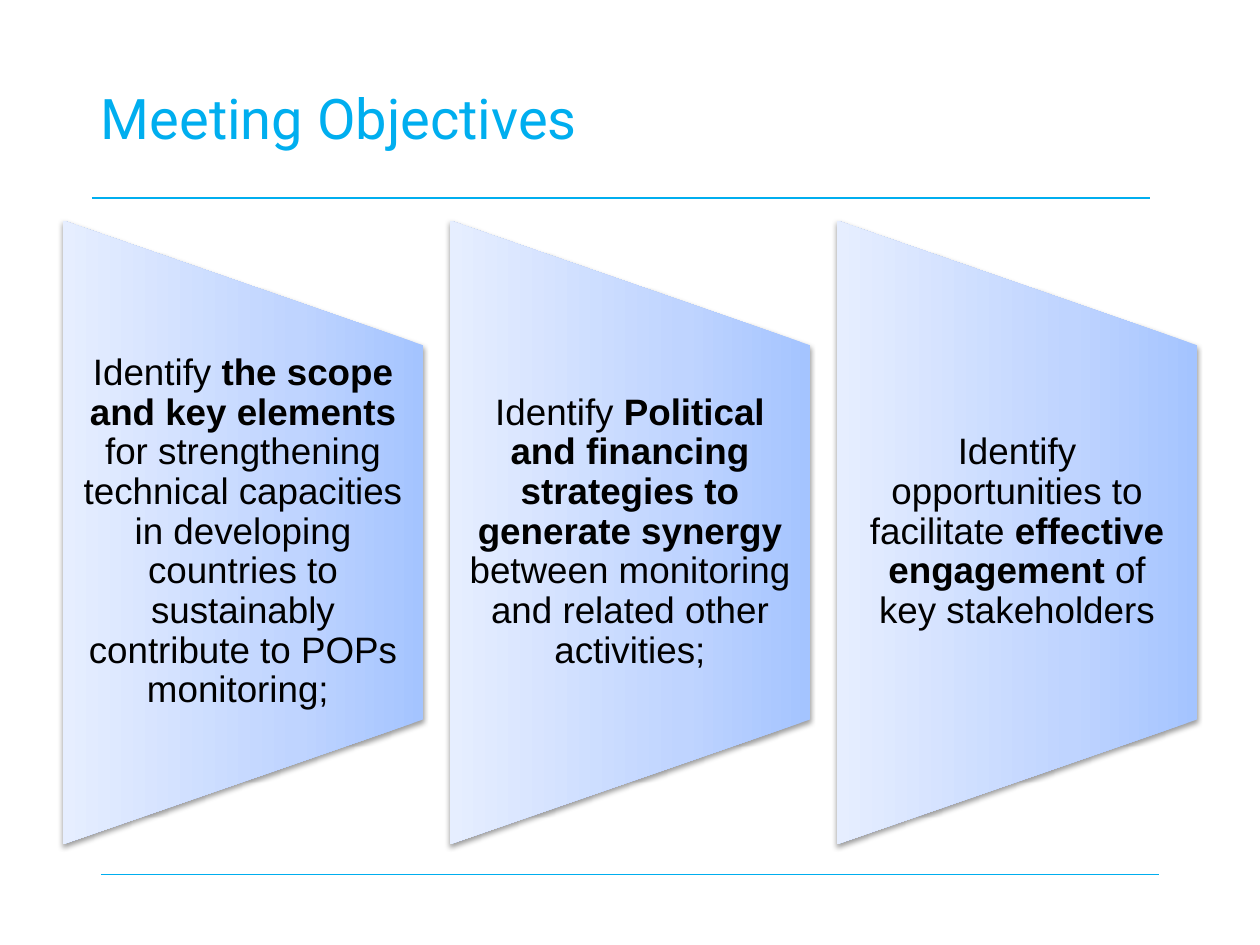
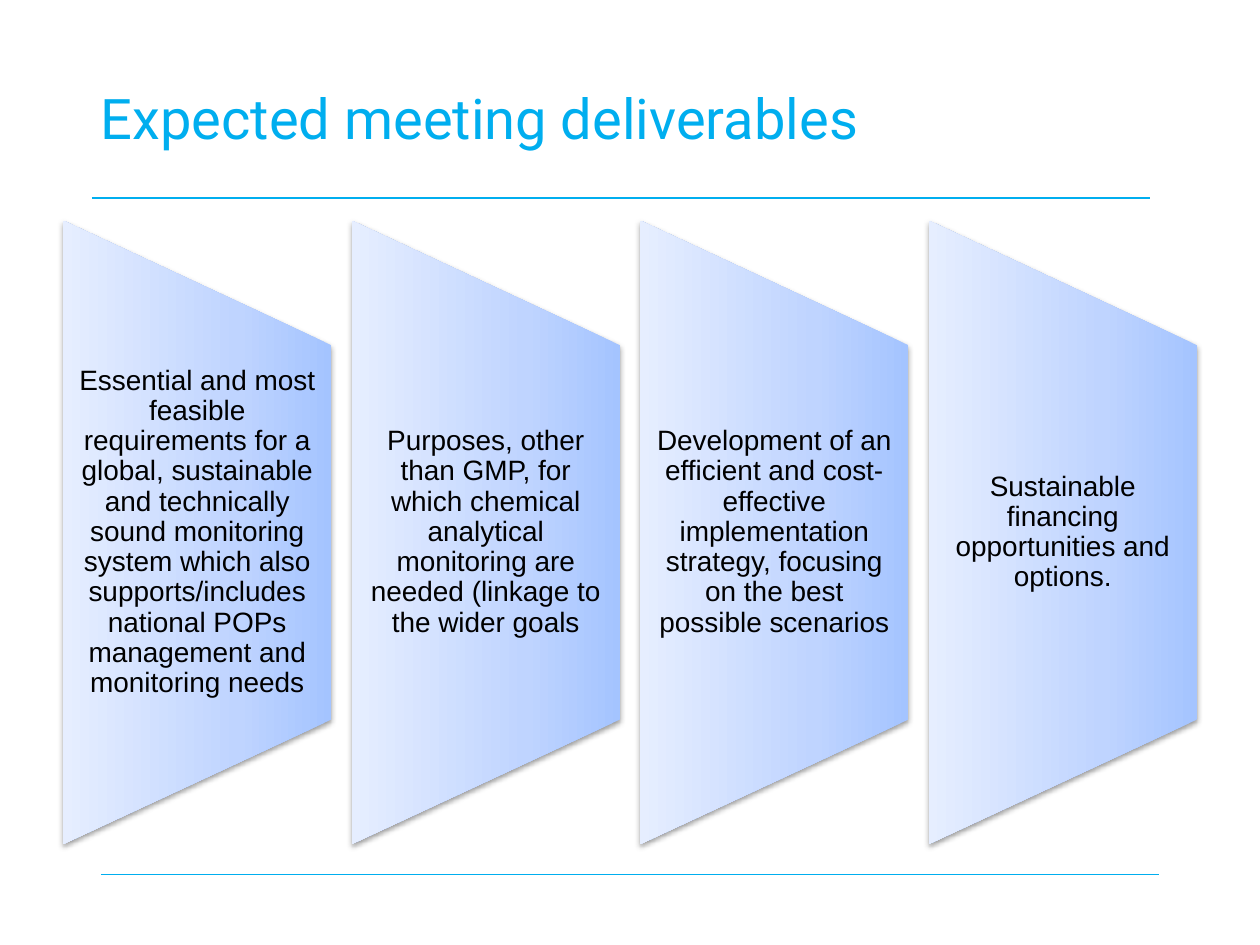
from lxml.etree import SubElement
from pptx import Presentation
from pptx.dml.color import RGBColor
from pptx.enum.shapes import MSO_CONNECTOR, MSO_SHAPE
from pptx.enum.text import MSO_ANCHOR, PP_ALIGN
from pptx.oxml import parse_xml
from pptx.oxml.ns import nsdecls, qn
from pptx.util import Inches, Pt

# Each panel is a list of (text, bold) spans.
SLIDES = [
    {
        "title": "Meeting Objectives",
        "size": 21,
        "inset": 0.15,
        "panels": [
            [("Identify ", False),
             ("the scope and key elements ", True),
             ("for strengthening technical capacities in developing countries "
              "to sustainably contribute to POPs monitoring; ", False)],
            [("Identify ", False),
             ("Political and financing strategies to generate synergy", True),
             (" between monitoring and related other activities;", False)],
            [("Identify opportunities to facilitate ", False),
             ("effective engagement ", True),
             ("of key stakeholders", False)],
        ],
    },
    {
        "title": "Expected meeting deliverables",
        "size": 16,
        "inset": 0.11,
        "panels": [
            [("Essential and most feasible requirements for a global, sustainable "
              "and technically sound monitoring system which also "
              "supports/includes national POPs management and monitoring needs",
              False)],
            [("Purposes, other than GMP, for which chemical analytical monitoring "
              "are needed (linkage to the wider goals", False)],
            [("Development of an efficient and cost-effective implementation "
              "strategy, focusing on the best possible scenarios", False)],
            [("Sustainable financing opportunities and options.", False)],
        ],
    },
]

COLOURS = {
    "accent": "00AEEF",
    "text": "000000",
    "shadow": "000000",
    "panel_dark": "A4C4FF",
    "panel_middle": "BFD4FF",
    "panel_light": "E6EEFF",
}
PANEL_STOPS = [(0, "panel_dark"), (35, "panel_middle"), (100, "panel_light")]
TITLE_FONT, BODY_FONT = "Roboto", "Arial"

ROW_LEFT, ROW_TOP, ROW_WIDTH, ROW_HEIGHT = 0.5, 1.75, 9, 4.95
GAP_RATIO = 0.075  # gap between panels, as a share of a panel's width
TEXT_TOP, TEXT_HEIGHT = 2.74, 2.97
RULE_LENGTH = 8.4
RULES = [(0.73, 1.57), (0.8, 6.94)]


def colour(name):
    return RGBColor.from_string(COLOURS[name])


def add_text_box(page, left, top, width, height, inset_x, inset_y):
    box = page.shapes.add_textbox(
        Inches(left), Inches(top), Inches(width), Inches(height))
    frame = box.text_frame
    frame.word_wrap = True
    frame.margin_left = frame.margin_right = Inches(inset_x)
    frame.margin_top = frame.margin_bottom = Inches(inset_y)
    return frame


def set_font(para, name, size, colour_name):
    para.font.name = name
    para.font.size = Pt(size)
    para.font.color.rgb = colour(colour_name)


def add_title(page, title):
    para = add_text_box(page, 0.8, 0.5, 8.4, 1.02, 0, 0.16).paragraphs[0]
    para.text = title
    set_font(para, TITLE_FONT, 32, "accent")


def add_rule(page, left, top):
    rule = page.shapes.add_connector(
        MSO_CONNECTOR.STRAIGHT, Inches(left), Inches(top),
        Inches(left + RULE_LENGTH), Inches(top))
    rule.line.color.rgb = colour("accent")
    rule.line.width = Pt(1)
    SubElement(rule._element.spPr, qn("a:effectLst"))


def style_panel(shape):
    """Give the panel its three-stop gradient and soft shadow, without outline."""
    stops = "".join(
        f'<a:gs pos="{position * 1000}"><a:srgbClr val="{COLOURS[name]}"/></a:gs>'
        for position, name in PANEL_STOPS)
    gradient = parse_xml(
        f'<a:gradFill {nsdecls("a")} rotWithShape="1"><a:gsLst>{stops}</a:gsLst>'
        '<a:lin ang="16200000" scaled="0"/></a:gradFill>')
    shadow = parse_xml(
        f'<a:effectLst {nsdecls("a")}><a:outerShdw blurRad="{Pt(3.1)}" '
        f'dist="{Pt(1.6)}" dir="5400000" rotWithShape="0">'
        f'<a:srgbClr val="{COLOURS["shadow"]}"><a:alpha val="38000"/></a:srgbClr>'
        '</a:outerShdw></a:effectLst>')
    shape.line.fill.background()
    properties = shape._element.spPr
    properties.find(qn("a:ln")).addprevious(gradient)
    properties.append(shadow)


def add_panel(page, left, width, spans, size, inset):
    # The shape lies on its side, so its sides swap about the same centre.
    shift = (ROW_HEIGHT - width) / 2
    shape = page.shapes.add_shape(
        MSO_SHAPE.FLOWCHART_MANUAL_OPERATION,
        Inches(left - shift), Inches(ROW_TOP + shift),
        Inches(ROW_HEIGHT), Inches(width))
    shape.rotation = 270
    style_panel(shape)

    frame = add_text_box(page, left, TEXT_TOP, width, TEXT_HEIGHT, inset, 0)
    frame.vertical_anchor = MSO_ANCHOR.MIDDLE
    para = frame.paragraphs[0]
    para.alignment = PP_ALIGN.CENTER
    para.line_spacing = 0.9
    set_font(para, BODY_FONT, size, "text")
    for text, bold in spans:
        span = para.add_run()
        span.text = text
        span.font.bold = bold


def add_page(deck, content):
    page = deck.slides.add_slide(deck.slide_layouts[6])
    add_title(page, content["title"])
    panels = content["panels"]
    width = ROW_WIDTH / (len(panels) + GAP_RATIO * (len(panels) - 1))
    for index, spans in enumerate(panels):
        left = ROW_LEFT + index * width * (1 + GAP_RATIO)
        add_panel(page, left, width, spans, content["size"], content["inset"])
    for left, top in RULES:
        add_rule(page, left, top)


def main():
    deck = Presentation()
    deck.slide_width, deck.slide_height = Inches(10), Inches(7.5)
    for content in SLIDES:
        add_page(deck, content)
    deck.save("out.pptx")


if __name__ == "__main__":
    main()
